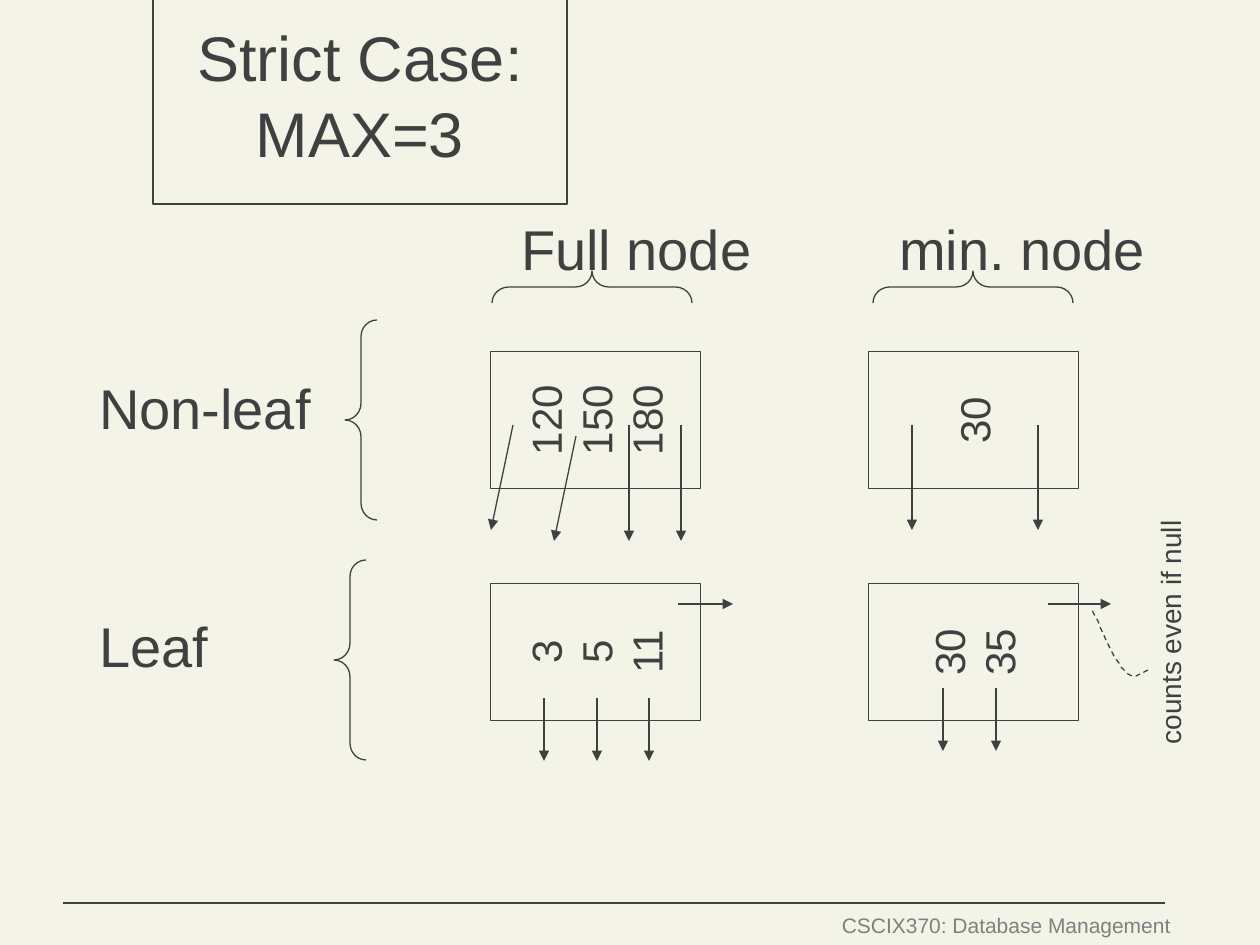
from dataclasses import dataclass

from lxml.etree import SubElement
from pptx import Presentation
from pptx.dml.color import RGBColor
from pptx.enum.dml import MSO_LINE
from pptx.enum.shapes import MSO_CONNECTOR as Connector, MSO_SHAPE as Preset
from pptx.enum.text import MSO_ANCHOR as Anchor, PP_ALIGN as Align
from pptx.oxml.ns import qn
from pptx.util import Emu, Pt

PX = 914400 / 126
INSET = 6


@dataclass(frozen=True)
class Theme:
    background: RGBColor = RGBColor(0xF3, 0xF3, 0xE7)
    ink: RGBColor = RGBColor(0x40, 0x40, 0x40)
    muted: RGBColor = RGBColor(0x80, 0x80, 0x80)
    font: str = "Arial"
    title: int = 36
    label: int = 32
    key: int = 24
    note: int = 16
    footer: int = 12
    line: float = 0.75


THEME = Theme()


@dataclass(frozen=True)
class Box:
    left: int
    top: int
    width: int
    height: int
    rotation: int = 0

    def emu(self) -> list[Emu]:
        return [px(v) for v in (self.left, self.top, self.width, self.height)]


@dataclass(frozen=True)
class Label:
    text: str
    box: Box
    size: int
    align: Align = Align.LEFT
    color: RGBColor = THEME.ink


@dataclass(frozen=True)
class Node:
    keys: str
    left: int
    top: int


@dataclass(frozen=True)
class Arrow:
    x1: int
    y1: int
    x2: int
    y2: int


FULL, MINIMUM = 491, 869
NON_LEAF, LEAF = 351, 583
NODE_WIDTH, NODE_HEIGHT = 210, 137

TITLE = Label("Strict Case: MAX=3", Box(153, -15, 414, 219), THEME.title, Align.CENTER)
LABELS = [
    Label("Full node", Box(515, 209, 245, 78), THEME.label),
    Label("min. node", Box(893, 209, 260, 78), THEME.label),
    Label("Non-leaf", Box(93, 368, 230, 78), THEME.label),
    Label("Leaf", Box(93, 606, 130, 78), THEME.label),
    Label("counts even if null", Box(1051, 611, 238, 43, 270), THEME.note, Align.CENTER),
    Label("CSCIX370: Database Management", Box(833, 907, 344, 37), THEME.footer,
          Align.RIGHT, THEME.muted),
]
NODES = [
    Node("120\n150\n180", FULL, NON_LEAF),
    Node("30", MINIMUM, NON_LEAF),
    Node("3\n5\n11", FULL, LEAF),
    Node("30\n35", MINIMUM, LEAF),
]
BRACES = [
    Box(345, 320, 32, 200),
    Box(334, 560, 32, 200),
    Box(576, 187, 32, 200, 90),
    Box(957, 187, 32, 200, 90),
]
ARROWS = [
    Arrow(513, 425, 491, 530),
    Arrow(576, 436, 554, 541),
    *(Arrow(x, 425, x, 541) for x in (629, 681)),
    *(Arrow(x, 425, x, 530) for x in (912, 1038)),
    *(Arrow(x, 698, x, 761) for x in (544, 597, 649)),
    *(Arrow(x, 688, x, 751) for x in (943, 996)),
    Arrow(678, 604, 733, 604),
    Arrow(1048, 604, 1111, 604),
]
FOOTER_RULE = Arrow(1165, 903, 63, 903)
NULL_POINTER_CURVES = [
    ((1148, 670), (1140, 675), (1133, 680), (1124, 670)),
    ((1124, 670), (1114, 660), (1097, 619), (1092, 609)),
]


def px(value: float) -> Emu:
    return Emu(round(value * PX))


def apply(target, values: dict) -> None:
    for name, value in values.items():
        setattr(target, name, value)


def style_line(shape) -> None:
    shape.line.color.rgb = THEME.ink
    shape.line.width = Pt(THEME.line)


def write_text(shape, label: Label, anchor: Anchor, wrap: bool) -> None:
    frame = shape.text_frame
    margins = {f"margin_{side}": px(INSET) for side in ("left", "top", "right", "bottom")}
    apply(frame, {"text": label.text, "word_wrap": wrap, "vertical_anchor": anchor, **margins})
    for paragraph in frame.paragraphs:
        paragraph.alignment = label.align
        apply(paragraph.font, {"name": THEME.font, "size": Pt(label.size)})
        paragraph.font.color.rgb = label.color


def add_label(slide, label: Label) -> None:
    shape = slide.shapes.add_textbox(*label.box.emu())
    shape.rotation = label.box.rotation
    write_text(shape, label, Anchor.MIDDLE, wrap=False)


def add_outline(slide, preset: Preset, box: Box):
    shape = slide.shapes.add_shape(preset, *box.emu())
    shape.rotation = box.rotation
    shape.shadow.inherit = False
    style_line(shape)
    return shape


def add_text_rectangle(slide, label: Label) -> None:
    shape = add_outline(slide, Preset.RECTANGLE, label.box)
    shape.fill.solid()
    shape.fill.fore_color.rgb = THEME.background
    write_text(shape, label, Anchor.MIDDLE, wrap=True)


def add_node(slide, node: Node) -> None:
    """Draw a node turned a quarter, so its keys read upwards."""
    shift = (NODE_WIDTH - NODE_HEIGHT) // 2
    box = Box(node.left + shift, node.top - shift, NODE_HEIGHT, NODE_WIDTH, 270)
    add_text_rectangle(slide, Label(node.keys, box, THEME.key, Align.CENTER))


def add_brace(slide, box: Box) -> None:
    shape = add_outline(slide, Preset.LEFT_BRACE, box)
    shape.fill.background()
    shape.adjustments[0] = 0.52


def add_line(slide, arrow: Arrow, head: bool = True) -> None:
    ends = [px(v) for v in (arrow.x1, arrow.y1, arrow.x2, arrow.y2)]
    connector = slide.shapes.add_connector(Connector.STRAIGHT, *ends)
    style_line(connector)
    if head:
        SubElement(connector.line._get_or_add_ln(), qn("a:tailEnd"), type="triangle")
    SubElement(connector._element.spPr, qn("a:effectLst"))


def bezier_points(curve: tuple, steps: int = 12) -> list[tuple[float, float]]:
    weights = [((1 - t) ** 3, 3 * t * (1 - t) ** 2, 3 * t * t * (1 - t), t ** 3)
               for t in (step / steps for step in range(1, steps + 1))]
    return [tuple(sum(w * point[axis] for w, point in zip(row, curve)) for axis in (0, 1))
            for row in weights]


def add_dashed_curve(slide, curves: list[tuple]) -> None:
    builder = slide.shapes.build_freeform(*curves[0][0], scale=PX)
    for curve in curves:
        builder.add_line_segments(bezier_points(curve), close=False)
    shape = builder.convert_to_shape()
    shape.shadow.inherit = False
    shape.fill.background()
    style_line(shape)
    shape.line.dash_style = MSO_LINE.DASH


def main() -> None:
    presentation = Presentation()
    apply(presentation, {"slide_width": px(1260), "slide_height": px(945)})
    slide = presentation.slides.add_slide(presentation.slide_layouts[6])
    slide.background.fill.solid()
    slide.background.fill.fore_color.rgb = THEME.background

    add_line(slide, FOOTER_RULE, head=False)
    add_text_rectangle(slide, TITLE)
    for draw, items in ((add_label, LABELS), (add_brace, BRACES),
                        (add_node, NODES), (add_line, ARROWS)):
        for item in items:
            draw(slide, item)
    add_dashed_curve(slide, NULL_POINTER_CURVES)
    presentation.save("out.pptx")


if __name__ == "__main__":
    main()
